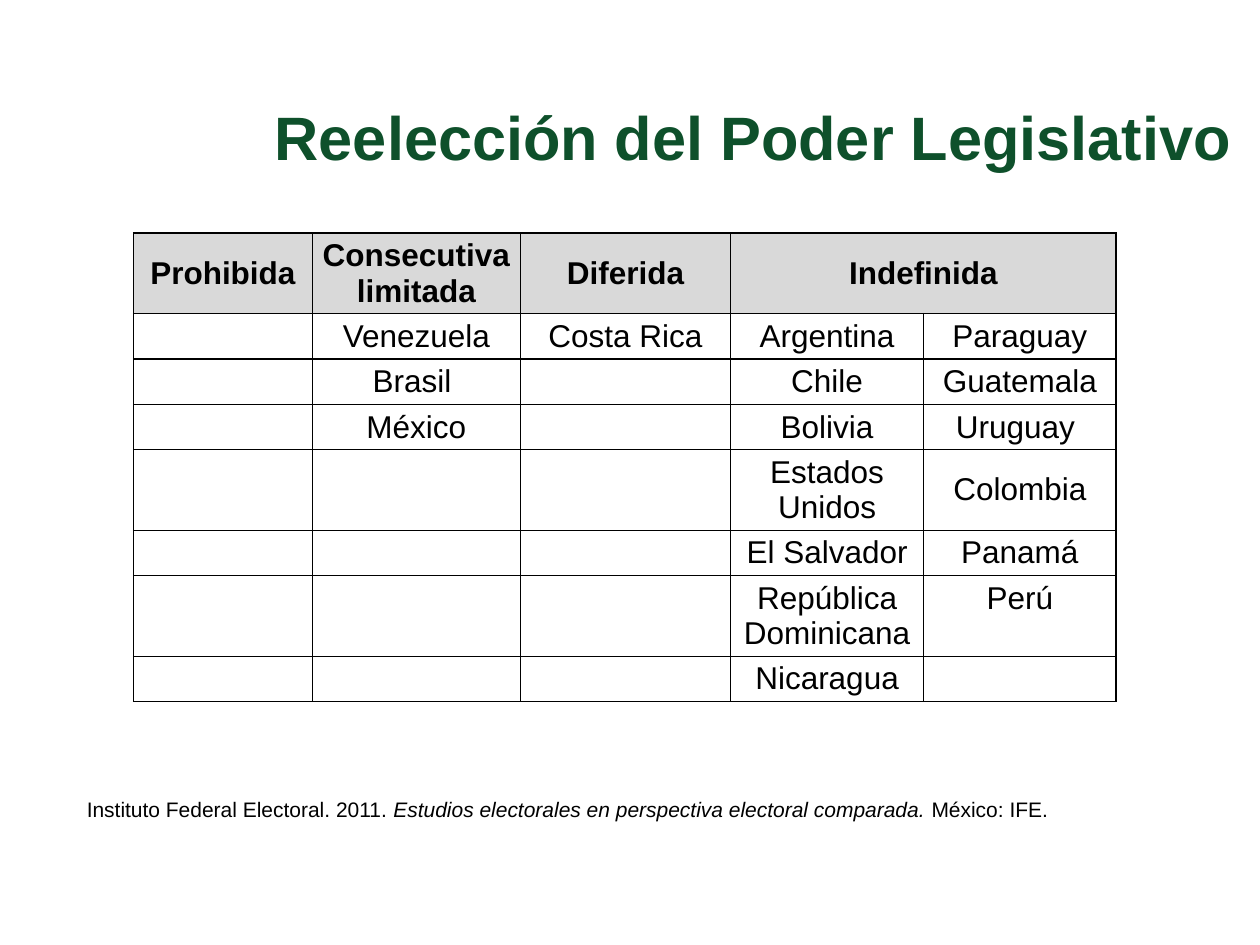
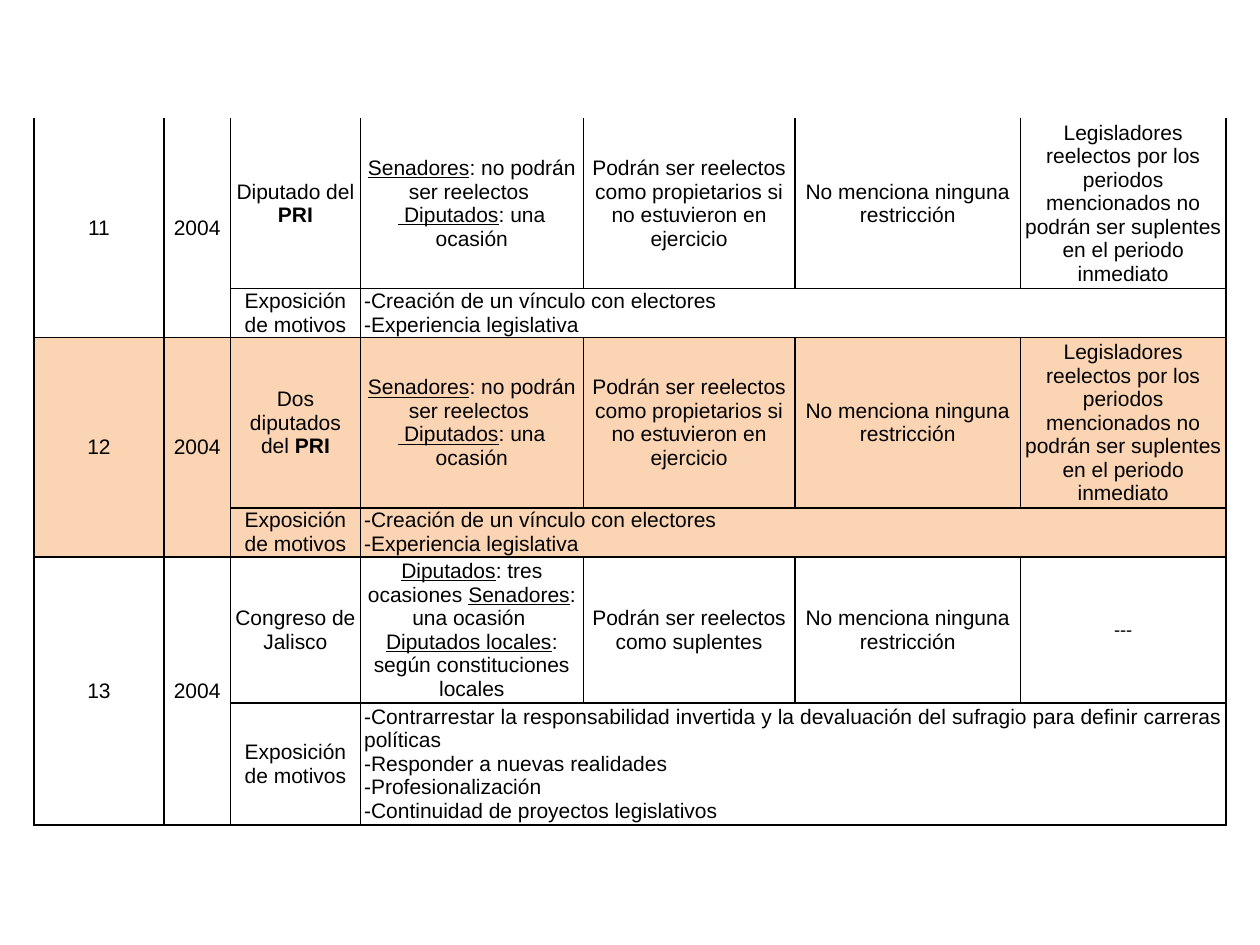
from dataclasses import dataclass

from lxml import etree
from pptx import Presentation
from pptx.dml.color import RGBColor
from pptx.enum.text import MSO_ANCHOR, MSO_AUTO_SIZE, PP_ALIGN
from pptx.oxml.ns import qn
from pptx.util import Inches, Pt

TOP, MIDDLE = MSO_ANCHOR.TOP, MSO_ANCHOR.MIDDLE
NO_AUTOFIT = MSO_AUTO_SIZE.NONE
CENTER, RIGHT, JUSTIFY = PP_ALIGN.CENTER, PP_ALIGN.RIGHT, PP_ALIGN.JUSTIFY
TITLE_ONLY, BLANK = 5, 6


@dataclass(frozen=True)
class Theme:
    font: str = "Arial"
    text: str = "000000"
    title: str = "0E502B"
    header_fill: str = "D9D9D9"
    highlight: str = "FBD4B4"
    title_size: float = 35
    country_size: float = 18
    body_size: float = 12
    dash_size: float = 10.5
    line_pitch: float = 1.12
    border: float = 1


theme = Theme()


def write_text(frame, paragraphs, size, align, color=theme.text, bold=False, pitch=theme.line_pitch):
    """Each paragraph is a string or a list of (text, style); style is "", b, i or u."""
    for index, content in enumerate(paragraphs):
        paragraph = frame.paragraphs[0] if index == 0 else frame.add_paragraph()
        paragraph.alignment = align
        if pitch:
            paragraph.line_spacing = Pt(size * pitch)
        paragraph.font.name = theme.font
        paragraph.font.size = Pt(size)
        paragraph.font.bold = bold
        paragraph.font.color.rgb = RGBColor.from_string(color)
        for text, style in [(content, "")] if isinstance(content, str) else content:
            if not text:
                continue
            run = paragraph.add_run()
            run.text = text
            if style == "b":
                run.font.bold = True
            elif style == "i":
                run.font.italic = True
            elif style == "u":
                run.font.underline = True
            elif style == "break":
                paragraph.add_line_break()


def add_grid(slide, left, top, column_widths, row_heights, margins, row_fills, open_top=False):
    """Add a ruled table whose rows are filled with row_fills (None for no fill)."""
    table = slide.shapes.add_table(
        len(row_heights), len(column_widths), Inches(left), Inches(top),
        Inches(sum(column_widths)), Inches(sum(row_heights))).table
    table.first_row = table.horz_banding = False
    for column, width in zip(table.columns, column_widths):
        column.width = Inches(width)
    for index, (row, height, fill) in enumerate(zip(table.rows, row_heights, row_fills)):
        row.height = Inches(height)
        for cell in row.cells:
            cell.vertical_anchor = MIDDLE
            cell.margin_left = cell.margin_right = Inches(margins[0])
            cell.margin_top = cell.margin_bottom = Inches(margins[1])
            properties = cell._tc.get_or_add_tcPr()
            for side in ("lnL", "lnR", "lnT", "lnB"):
                line = etree.SubElement(properties, qn(f"a:{side}"), w=str(Pt(theme.border)))
                if open_top and index == 0 and side == "lnT":
                    etree.SubElement(line, qn("a:noFill"))
                else:
                    solid = etree.SubElement(line, qn("a:solidFill"))
                    etree.SubElement(solid, qn("a:srgbClr"), val=theme.text)
            if fill:
                cell.fill.solid()
                cell.fill.fore_color.rgb = RGBColor.from_string(fill)
            else:
                cell.fill.background()
    return table


presentation = Presentation()
presentation.slide_width = Inches(10)
presentation.slide_height = Inches(7.5)

# Slide 1: title
slide = presentation.slides.add_slide(presentation.slide_layouts[TITLE_ONLY])
title = slide.shapes.title
title.left, title.top, title.width, title.height = (Inches(n) for n in (0.88, 0.69, 9, 0.7))
frame = title.text_frame
frame.auto_size = NO_AUTOFIT
frame.vertical_anchor = TOP
frame.margin_left = frame.margin_right = frame.margin_top = frame.margin_bottom = Inches(0.1)
write_text(frame, ["Reelección del Poder Legislativo"], theme.title_size, RIGHT,
           theme.title, bold=True, pitch=None)

# Slide 1: countries by type of reelection
countries = [
    ["Prohibida", "Consecutiva limitada", "Diferida", "Indefinida", ""],
    ["", "Venezuela", "Costa Rica", "Argentina", "Paraguay"],
    ["", "Brasil ", "", "Chile", "Guatemala"],
    ["", "México", "", "Bolivia", "Uruguay "],
    ["", "", "", "Estados Unidos", "Colombia"],
    ["", "", "", "El Salvador", "Panamá"],
    ["", "", "", "República Dominicana", "Perú"],
    ["", "", "", "Nicaragua", ""],
]
one_line, two_lines = 0.36, 0.64
country_heights = [two_lines if row in (0, 4, 6) else one_line for row in range(len(countries))]
country_table = add_grid(slide, 1.06, 1.85, [1.42, 1.65, 1.67, 1.53, 1.53], country_heights,
                         (0.04, 0.04), [theme.header_fill] + [None] * 7)
country_table.cell(0, 3).merge(country_table.cell(0, 4))
for row, names in enumerate(countries):
    for column, name in enumerate(names):
        write_text(country_table.cell(row, column).text_frame, [name],
                   theme.country_size, CENTER, bold=row == 0)
country_table.cell(6, 4).vertical_anchor = TOP

# Slide 1: reference
reference = slide.shapes.add_textbox(Inches(0.59), Inches(6.27), Inches(8.11), Inches(0.3))
reference.text_frame.word_wrap = True
write_text(reference.text_frame, [[
    ("Instituto Federal Electoral. 2011. ", ""),
    ("Estudios electorales en perspectiva electoral comparada. ", "i"),
    ("México: IFE.", "")]], theme.body_size, JUSTIFY, pitch=None)

# Slide 2: initiatives, each with its terms and its reasons
slide = presentation.slides.add_slide(presentation.slide_layouts[BLANK])
party_limits = [
    [("Senadores", "u"), (": no podrán ser reelectos ", "")],
    [(" Diputados", "u"), (": una ocasión", "")],
]
state_limits = [[
    ("Diputados", "u"), (": tres ocasiones ", ""), ("Senadores", "u"), (": una ocasión ", "break"),
    ("Diputados locales", "u"), (": según constituciones locales", ""),
]]
as_owners = "Podrán ser reelectos como propietarios si no estuvieron en ejercicio"
no_restriction = "No menciona ninguna restricción"
no_substitutes = ("Legisladores reelectos por los periodos mencionados no podrán ser "
                  "suplentes en el periodo inmediato")
party_reasons = ["-Creación de un vínculo con electores", "-Experiencia legislativa"]
state_reasons = [
    "-Contrarrestar la responsabilidad invertida y la devaluación del sufragio "
    "para definir carreras políticas",
    "-Responder a nuevas realidades",
    "-Profesionalización",
    "-Continuidad de proyectos legislativos",
]
initiatives = [
    ("11", [("Diputado del ", ""), ("PRI", "b")], party_limits, as_owners,
     no_substitutes, party_reasons),
    ("12", [("Dos diputados del ", ""), ("PRI", "b")], party_limits, as_owners,
     no_substitutes, party_reasons),
    ("13", "Congreso de Jalisco", state_limits, "Podrán ser reelectos como suplentes",
     "---", state_reasons),
]
initiative_table = add_grid(
    slide, 0.27, 0.94, [1.03, 0.53, 1.03, 1.77, 1.68, 1.79, 1.63],
    [1.35, 0.39, 1.35, 0.39, 1.16, 0.97], (0.03, 0),
    [None, None, theme.highlight, theme.highlight, None, None], open_top=True)
for index, (number, author, limits, substitutes, others, reasons) in enumerate(initiatives):
    row = 2 * index
    for column in (0, 1):
        initiative_table.cell(row, column).merge(initiative_table.cell(row + 1, column))
    initiative_table.cell(row + 1, 3).merge(initiative_table.cell(row + 1, 6))
    terms = [[number], ["2004"], [author], limits, [substitutes], [no_restriction], [others]]
    for column, paragraphs in enumerate(terms):
        size = theme.dash_size if paragraphs == ["---"] else theme.body_size
        write_text(initiative_table.cell(row, column).text_frame, paragraphs, size, CENTER)
    write_text(initiative_table.cell(row + 1, 2).text_frame, ["Exposición de motivos"],
               theme.body_size, CENTER)
    write_text(initiative_table.cell(row + 1, 3).text_frame, reasons, theme.body_size, JUSTIFY)

presentation.save("out.pptx")
